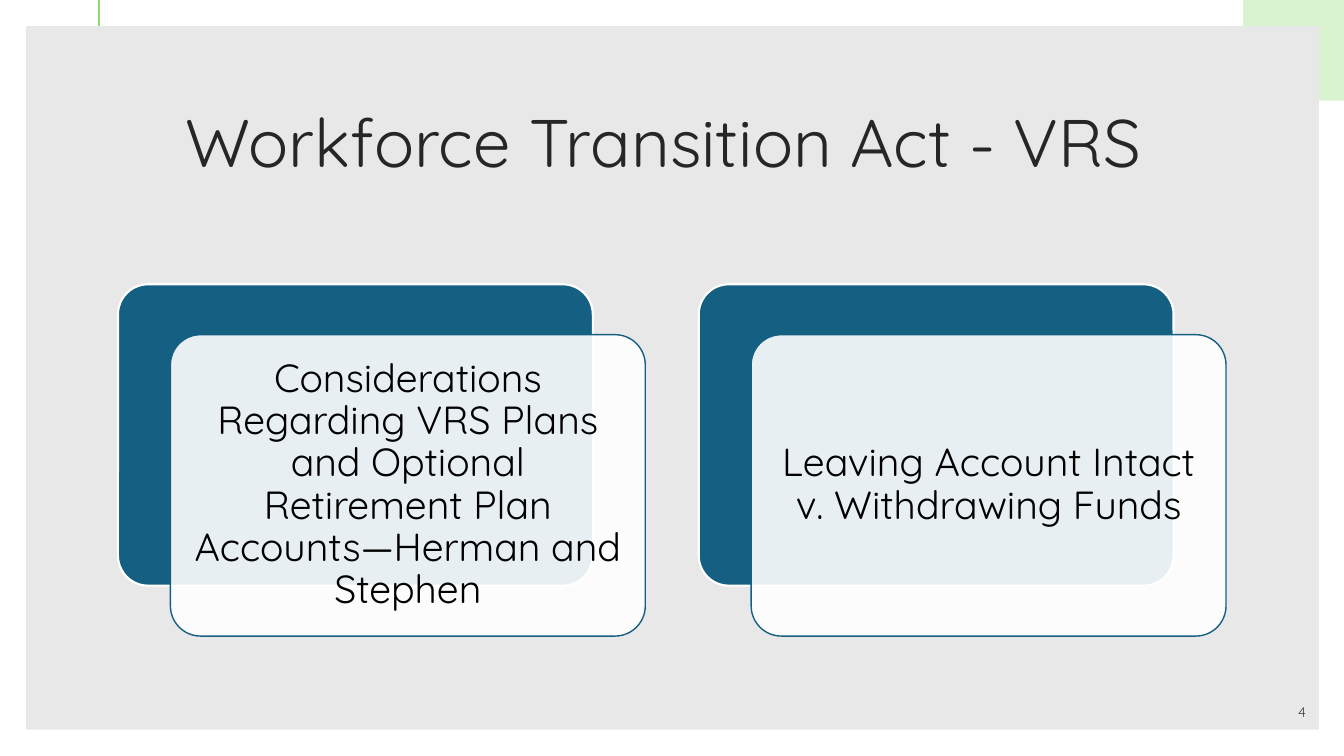
from pptx import Presentation
from pptx.dml.color import RGBColor
from pptx.enum import shapes, text
from pptx.oxml import ns, xmlchemy
from pptx.util import Inches, Pt

FONT = "Quicksand"
WHITE = RGBColor(0xFF, 0xFF, 0xFF)
BLACK = RGBColor(0, 0, 0)
PANEL_GREY = RGBColor(0xE8, 0xE8, 0xE8)
PALE_GREEN = RGBColor(0xD9, 0xF2, 0xD0)
LINE_GREEN = RGBColor(0x8E, 0xD9, 0x73)
TEAL = RGBColor(0x15, 0x60, 0x82)
TITLE_GREY = RGBColor(0x26, 0x26, 0x26)
NUMBER_GREY = RGBColor(0x40, 0x40, 0x40)

TOPICS = [
    "Considerations Regarding VRS Plans and Optional Retirement Plan "
    "Accounts—Herman and Stephen",
    "Leaving Account Intact v. Withdrawing Funds",
]
CARD_LEFT, CARD_TOP, CARD_STEP = 1.17, 2.82, 5.76
CARD_WIDTH, CARD_HEIGHT = 4.71, 2.99
CARD_SHIFT_X, CARD_SHIFT_Y = 0.52, 0.5


def add_block(page, kind, left, top, width, height, fill):
    block = page.shapes.add_shape(
        kind, Inches(left), Inches(top), Inches(width), Inches(height))
    block.shadow.inherit = False
    block.fill.solid()
    block.fill.fore_color.rgb = fill
    block.line.fill.background()
    return block


def add_card(page, left, top, fill, outline, line_width):
    card = add_block(page, shapes.MSO_SHAPE.ROUNDED_RECTANGLE,
                     left, top, CARD_WIDTH, CARD_HEIGHT, fill)
    card.adjustments[0] = 0.1
    card.line.color.rgb = outline
    card.line.width = Pt(line_width)
    return card


def set_opacity(shape, percent):
    color = shape.fill._xPr.find(ns.qn("a:solidFill"))[0]
    alpha = xmlchemy.OxmlElement("a:alpha")
    alpha.set("val", str(percent * 1000))
    color.append(alpha)


def write(box, words, size, color, align, anchor, margin=None, spacing=None):
    frame = box.text_frame
    frame.text = words
    frame.word_wrap = True
    frame.auto_size = text.MSO_AUTO_SIZE.NONE
    frame.vertical_anchor = anchor
    if margin is not None:
        frame.margin_left = frame.margin_right = Inches(margin)
        frame.margin_top = frame.margin_bottom = Inches(margin)
    para = frame.paragraphs[0]
    para.alignment = align
    para.line_spacing = spacing
    font = para.runs[0].font
    font.name, font.size, font.color.rgb = FONT, Pt(size), color


def add_backdrop(page):
    rectangle = shapes.MSO_SHAPE.RECTANGLE
    add_block(page, rectangle, 12.33, 0, 1, 1, PALE_GREEN)
    accent = page.shapes.add_connector(
        shapes.MSO_CONNECTOR.STRAIGHT,
        Inches(0.98), Inches(0), Inches(0.98), Inches(6.5))
    accent.line.color.rgb = LINE_GREEN
    accent.line.width = Pt(1.5)
    accent._element.spPr.append(xmlchemy.OxmlElement("a:effectLst"))
    add_block(page, rectangle, 0.26, 0.26, 12.82, 6.98, PANEL_GREY)


def add_title(page, words):
    title = page.shapes.title
    title.left, title.top = Inches(1.17), Inches(0.7)
    title.width, title.height = Inches(11), Inches(1.5)
    write(title, words, 48, TITLE_GREY, text.PP_ALIGN.CENTER,
          text.MSO_ANCHOR.MIDDLE, spacing=0.9)
    # Bring the title in front of the panel
    page.shapes._spTree.append(title._element)


def add_page_number(page, number):
    box = page.shapes.add_textbox(
        Inches(11.45), Inches(6.9), Inches(1.6), Inches(0.3))
    write(box, number, 10, NUMBER_GREY, text.PP_ALIGN.RIGHT,
          text.MSO_ANCHOR.BOTTOM)


def add_topic(page, left, words):
    add_card(page, left, CARD_TOP, TEAL, WHITE, 1.5)
    front = add_card(page, left + CARD_SHIFT_X, CARD_TOP + CARD_SHIFT_Y,
                     WHITE, TEAL, 1)
    set_opacity(front, 90)
    write(front, words, 28, BLACK, text.PP_ALIGN.CENTER,
          text.MSO_ANCHOR.MIDDLE, margin=0.12, spacing=0.9)


def main():
    deck = Presentation()
    deck.slide_width, deck.slide_height = Inches(13.33), Inches(7.5)
    page = deck.slides.add_slide(deck.slide_layouts.get_by_name("Title Only"))

    # Background, title and page number
    add_backdrop(page)
    add_title(page, "Workforce Transition Act - VRS ")
    add_page_number(page, "4")

    # Layered topic cards
    for index, words in enumerate(TOPICS):
        add_topic(page, CARD_LEFT + index * CARD_STEP, words)

    deck.save("out.pptx")


if __name__ == "__main__":
    main()
